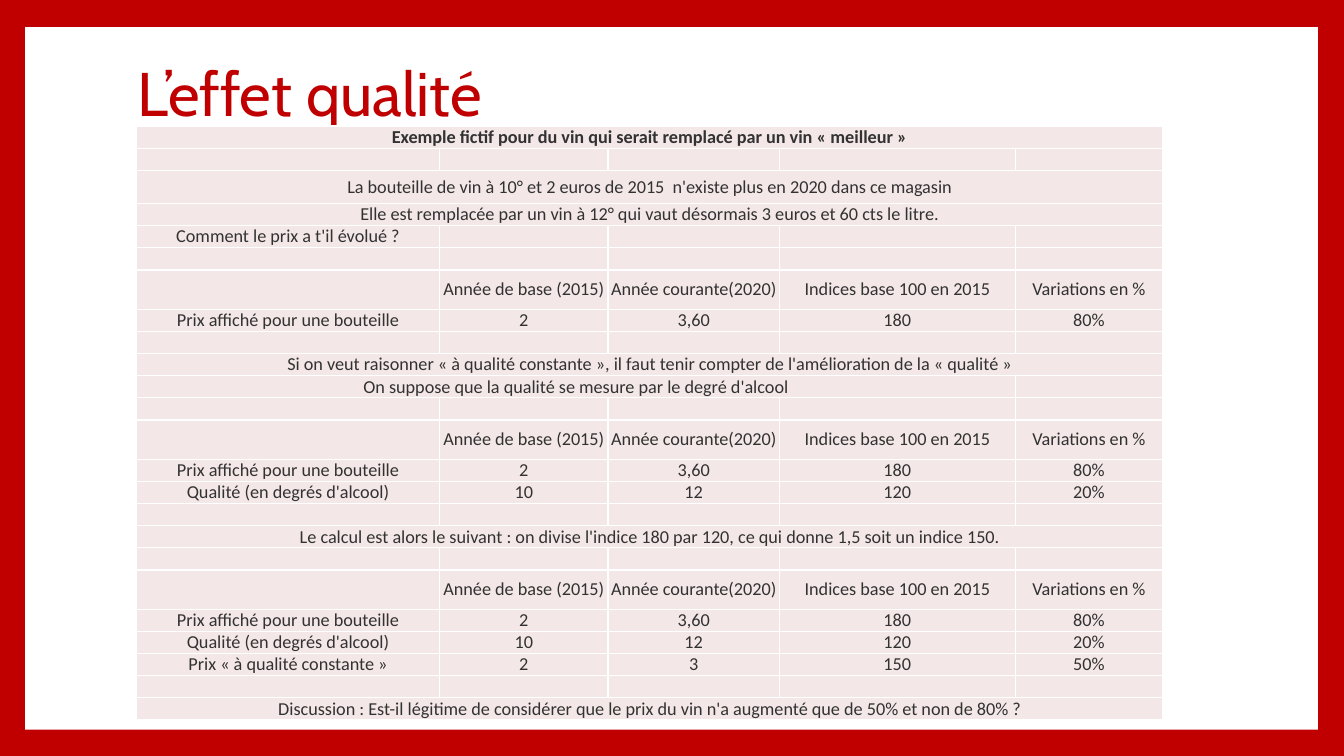
from pptx import Presentation
from pptx.dml.color import RGBColor
from pptx.enum.shapes import MSO_SHAPE
from pptx.enum.text import MSO_ANCHOR, PP_ALIGN
from pptx.util import Inches, Pt

RED = RGBColor(0xC0, 0x00, 0x00)
WHITE = RGBColor(0xFF, 0xFF, 0xFF)
PINK = RGBColor(0xF4, 0xE7, 0xE7)
INK = RGBColor(0x32, 0x32, 0x32)

COLS = [3.01, 1.67, 1.7, 2.34, 1.46]
LOW, MID, HIGH = 0.22, 0.33, 0.39

# Rows that recur in the three steps of the example
BLANK = (LOW, 1, [])
HEAD = (HIGH, 1, ["", "Année de base (2015)", "Année courante(2020)",
                  "Indices base 100 en 2015", "Variations en %"])
PRICE = (LOW, 1, ["Prix affiché pour une bouteille", "2", "3,60", "180", "80%"])
GRADE = (LOW, 1, ["Qualité (en degrés d'alcool)", "10", "12", "120", "20%"])

# Each row: height, columns spanned by its first cell, texts
ROWS = [
    (LOW, 5, ["Exemple fictif pour du vin qui serait remplacé par un vin « meilleur »"]),
    BLANK,
    (MID, 5, ["La bouteille de vin à 10° et 2 euros de 2015  n'existe plus en 2020 dans ce magasin"]),
    (LOW, 5, ["Elle est remplacée par un vin à 12° qui vaut désormais 3 euros et 60 cts le litre."]),
    (LOW, 1, ["Comment le prix a t'il évolué ?"]),
    BLANK, HEAD, PRICE, BLANK,
    (LOW, 5, ["Si on veut raisonner « à qualité constante », il faut tenir compter "
              "de l'amélioration de la « qualité »"]),
    (LOW, 4, ["On suppose que la qualité se mesure par le degré d'alcool"]),
    BLANK, HEAD, PRICE, GRADE, BLANK,
    (LOW, 5, ["Le calcul est alors le suivant : on divise l'indice 180 par 120, "
              "ce qui donne 1,5 soit un indice 150."]),
    BLANK, HEAD, PRICE, GRADE,
    (LOW, 1, ["Prix « à qualité constante »", "2", "3", "150", "50%"]),
    BLANK,
    (LOW, 5, ["Discussion : Est-il légitime de considérer que le prix du vin "
              "n'a augmenté que de 50% et non de 80% ?"]),
]


def style(par, name, size, color, bold=False):
    font = par.font
    font.name, font.size, font.bold = name, Pt(size), bold
    font.color.rgb = color


def add_frame(slide, left, top, width, height):
    """Red background with a white panel."""
    fill = slide.background.fill
    fill.solid()
    fill.fore_color.rgb = RED
    panel = slide.shapes.add_shape(MSO_SHAPE.RECTANGLE, Inches(left), Inches(top),
                                   Inches(width), Inches(height))
    panel.shadow.inherit = False
    panel.fill.solid()
    panel.fill.fore_color.rgb = WHITE
    panel.line.fill.background()


def add_title(slide, text, left, top, width, height):
    box = slide.shapes.add_textbox(Inches(left), Inches(top),
                                   Inches(width), Inches(height))
    frame = box.text_frame
    frame.word_wrap = True
    frame.vertical_anchor = MSO_ANCHOR.MIDDLE
    par = frame.paragraphs[0]
    par.text = text
    par.line_spacing = 0.9
    style(par, "Cabin", 44, RED)


def fill_cell(cell, text, bold):
    cell.fill.solid()
    cell.fill.fore_color.rgb = PINK
    cell.margin_left = cell.margin_right = 0
    cell.margin_top = cell.margin_bottom = 0
    cell.vertical_anchor = MSO_ANCHOR.MIDDLE
    par = cell.text_frame.paragraphs[0]
    if text:
        par.text = text
    par.alignment = PP_ALIGN.CENTER
    style(par, "Calibri", 13, INK, bold)


def add_prices(slide, left, top):
    """Table of the three steps, sized by its rows and columns."""
    height = sum(row[0] for row in ROWS)
    table = slide.shapes.add_table(len(ROWS), len(COLS), Inches(left), Inches(top),
                                   Inches(sum(COLS)), Inches(height)).table
    table.first_row = table.horz_banding = False
    for col, width in zip(table.columns, COLS):
        col.width = Inches(width)
    for i, (tall, span, texts) in enumerate(ROWS):
        table.rows[i].height = Inches(tall)
        for j in range(len(COLS)):
            text = texts[j] if j < len(texts) else ""
            fill_cell(table.cell(i, j), text, bold=i == 0)
        if span > 1:
            table.cell(i, 0).merge(table.cell(i, span - 1))


def main():
    deck = Presentation()
    deck.slide_width, deck.slide_height = Inches(13.33), Inches(7.5)
    slide = deck.slides.add_slide(deck.slide_layouts[6])
    add_frame(slide, 0.25, 0.27, 12.82, 6.97)
    add_title(slide, "L’effet qualité", 1.27, 0.22, 10.8, 1.48)
    add_prices(slide, 1.35, 1.25)
    deck.save("out.pptx")


if __name__ == "__main__":
    main()
